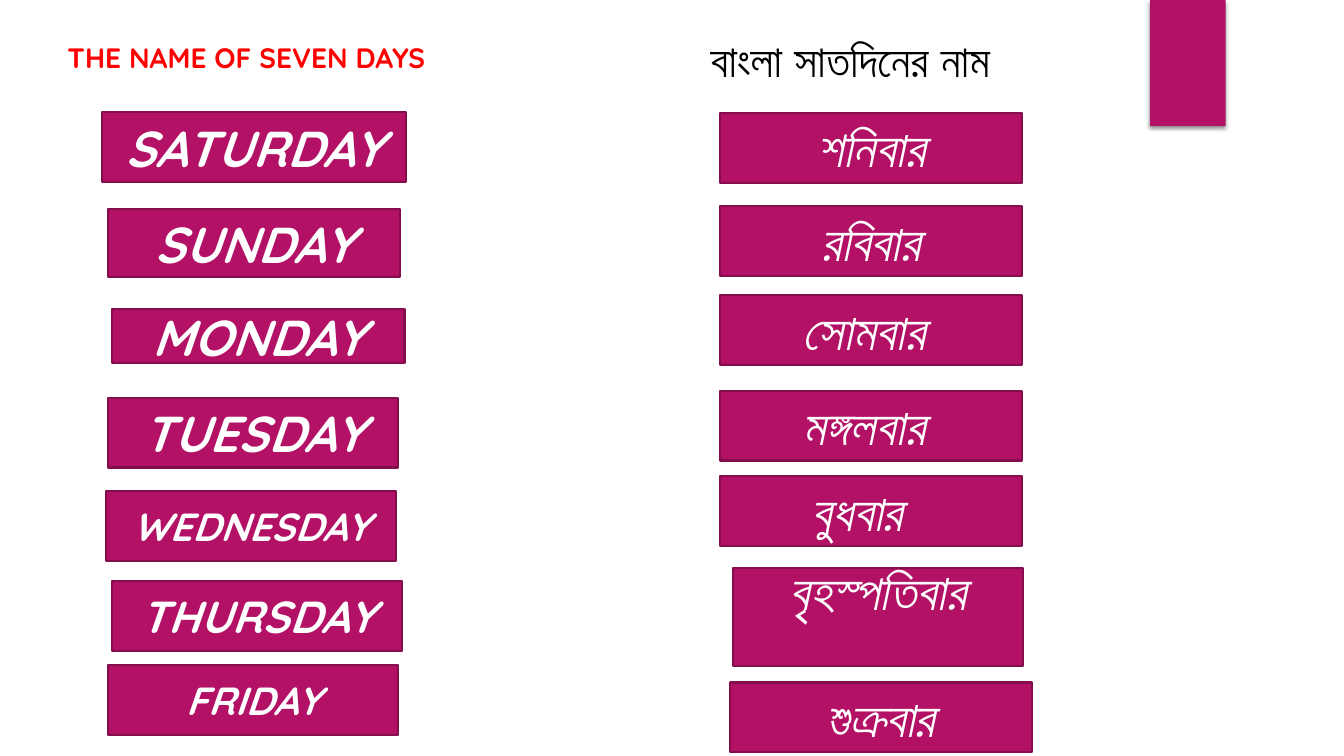
from lxml import etree
from pptx import Presentation
from pptx.dml.color import RGBColor
from pptx.enum.shapes import MSO_SHAPE
from pptx.enum.text import MSO_ANCHOR, MSO_AUTO_SIZE, PP_ALIGN
from pptx.util import Pt

RECTANGLE = MSO_SHAPE.RECTANGLE
TOP, MIDDLE = MSO_ANCHOR.TOP, MSO_ANCHOR.MIDDLE
LEFT, CENTER = PP_ALIGN.LEFT, PP_ALIGN.CENTER
NO_AUTOFIT = MSO_AUTO_SIZE.NONE
MAGENTA, DARK_MAGENTA = "B31166", "840D4B"
TITLE_ONLY = 5

SHADOW = """<a:effectLst xmlns:a="http://schemas.openxmlformats.org/drawingml/2006/main">
  <a:outerShdw blurRad="38100" dist="25400" dir="5400000" rotWithShape="0">
    <a:srgbClr val="000000"><a:alpha val="45000"/></a:srgbClr>
  </a:outerShdw>
</a:effectLst>"""


def color(value):
    return RGBColor.from_string(value)


def set_text(shape, text, size, font="Quicksand", ink="FFFFFF", italic=False,
             alignment=LEFT, anchor=TOP):
    frame = shape.text_frame
    frame.word_wrap = True
    frame.auto_size = NO_AUTOFIT
    frame.vertical_anchor = anchor
    paragraph = frame.paragraphs[0]
    paragraph.alignment = alignment
    run = paragraph.add_run()
    run.text = text
    run.font.name = font
    run.font.size = Pt(size)
    run.font.bold = True
    run.font.italic = italic
    run.font.color.rgb = color(ink)


presentation = Presentation()
presentation.slide_width, presentation.slide_height = Pt(960), Pt(540)
slide = presentation.slides.add_slide(presentation.slide_layouts[TITLE_ONLY])

# Corner ribbon
ribbon = slide.shapes.add_shape(RECTANGLE, Pt(821.5), Pt(0), Pt(54), Pt(90))
ribbon.fill.solid()
ribbon.fill.fore_color.rgb = color(MAGENTA)
ribbon.line.fill.background()
ribbon.element.spPr.append(etree.fromstring(SHADOW))

# Column headings
title = slide.shapes.title
title.left, title.top, title.width, title.height = Pt(41), Pt(25), Pt(280), Pt(32)
set_text(title, "THE NAME OF SEVEN DAYS", 20, ink="FF0000")

bangla_heading = slide.shapes.add_textbox(Pt(500.5), Pt(20), Pt(228), Pt(46))
set_text(bangla_heading, "বাংলা সাতদিনের নাম", 32, font="Lato", ink="000000")

# Day boxes: name, left, top, width, height, text size, right inset, bottom inset
DAYS = [
    ("SATURDAY", 73, 80, 217, 50, 36, 7.2, 3.6),
    ("SUNDAY", 77, 149, 209, 49, 36, 7.2, 3.6),
    ("MONDAY", 80, 220.5, 209, 39, 36, 7.2, 3.6),
    ("TUESDAY", 77, 284, 207.5, 50, 36, 7.2, 3.6),
    ("WEDNESDAY", 75.5, 350.5, 207.5, 50, 28, 7.2, 3.6),
    ("THURSDAY", 80, 415, 207.5, 50, 32, 7.2, 3.6),
    ("FRIDAY", 77, 475, 207.5, 50, 28, 7.2, 3.6),
    ("শনিবার", 514.5, 80.5, 215.5, 50, 36, 7.2, 3.6),
    ("রবিবার", 514.5, 147.5, 215.5, 50, 36, 7.2, 3.6),
    ("সোমবার", 514.5, 211, 215.5, 50, 36, 17, 3.6),
    ("মঙ্গলবার", 514.5, 279, 215.5, 50, 36, 17, 3.6),
    ("বুধবার", 514.5, 340, 215.5, 50, 36, 27, 3.6),
    ("বৃহস্পতিবার", 523.5, 406, 207.5, 69.5, 36, 7.2, 42),
    ("শুক্রবার", 521.5, 487.5, 215.5, 50, 36, 7.2, 3.6),
]
for name, left, top, width, height, size, right_inset, bottom_inset in DAYS:
    box = slide.shapes.add_shape(RECTANGLE, Pt(left), Pt(top), Pt(width), Pt(height))
    box.shadow.inherit = False
    box.fill.solid()
    box.fill.fore_color.rgb = color(MAGENTA)
    box.line.color.rgb = color(DARK_MAGENTA)
    box.line.width = Pt(1.5)
    box.text_frame.margin_right = Pt(right_inset)
    box.text_frame.margin_bottom = Pt(bottom_inset)
    set_text(box, name, size, italic=True, alignment=CENTER, anchor=MIDDLE)

presentation.save("out.pptx")
